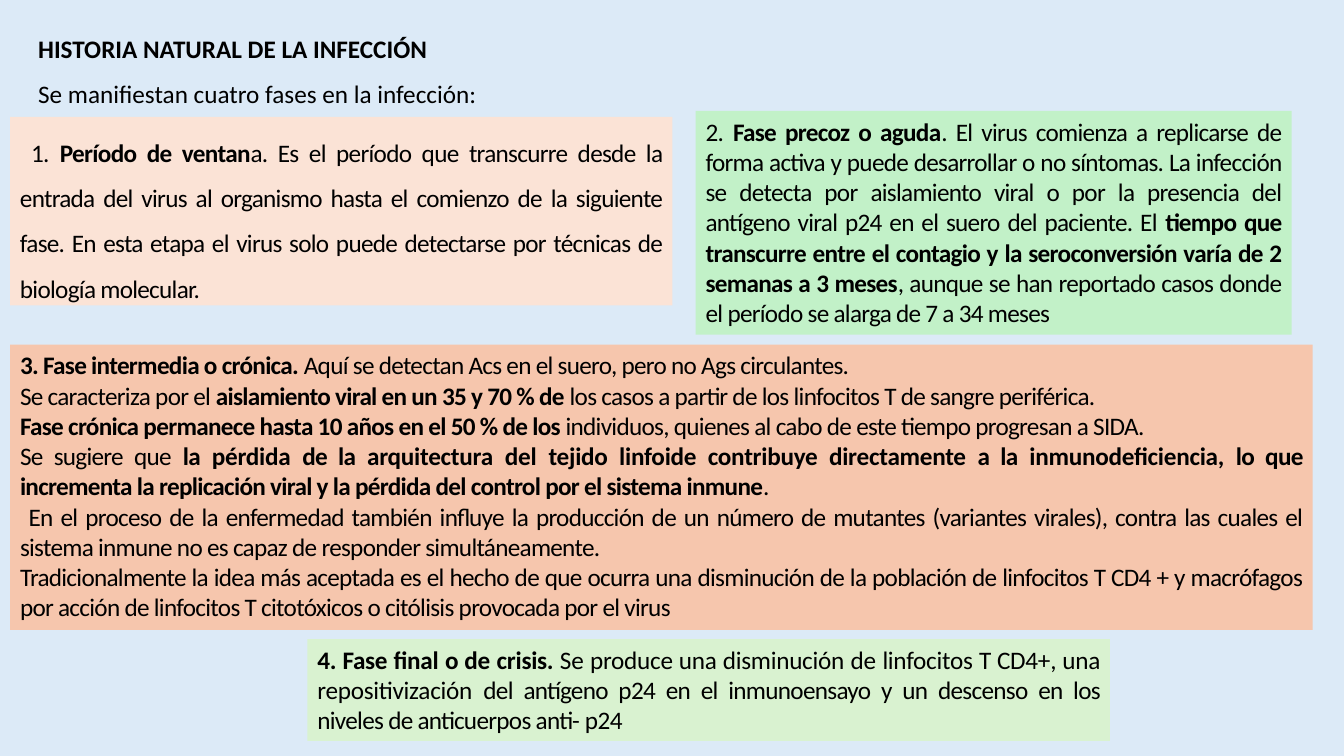
from dataclasses import dataclass

from pptx import Presentation
from pptx.dml.color import RGBColor
from pptx.enum.shapes import MSO_SHAPE
from pptx.enum.text import MSO_ANCHOR, MSO_AUTO_SIZE, PP_ALIGN
from pptx.slide import Slide
from pptx.util import Inches, Pt

RECTANGLE = MSO_SHAPE.RECTANGLE
TOP = MSO_ANCHOR.TOP
GROW = MSO_AUTO_SIZE.SHAPE_TO_FIT_TEXT
JUSTIFY = PP_ALIGN.JUSTIFY

COLOURS = {
    "background": "DCEAF7",
    "window": "FBE3D6",
    "acute": "C2F1C8",
    "chronic": "F6C6AD",
    "final": "D9F2D0",
    "text": "000000",
}
FONT_FORMAT = {"name": "Calibri", "size": Pt(18)}
FRAME_FORMAT = {"word_wrap": True, "auto_size": GROW, "vertical_anchor": TOP}


@dataclass(frozen=True)
class Span:
    text: str
    spacing: float = -0.5
    bold: bool = False


@dataclass(frozen=True)
class Box:
    left: float
    top: float
    width: float
    height: float
    paragraphs: list[list[Span]]
    fill: str = ""
    line_spacing: float = 1.0


def strong(text: str, spacing: float = -0.5) -> Span:
    return Span(text, spacing, True)


BOXES = [
    Box(0.28, 0.13, 11.85, 0.96, [
        [strong("HISTORIA NATURAL DE LA INFECCIÓN", 0)],
        [Span("Se manifiestan cuatro fases en la infección:", 0)],
    ], line_spacing=1.5),
    Box(0.1, 1.16, 6.57, 1.87, [[
        Span(" ", 0),
        Span("1. "),
        strong("Período de ventan"),
        Span("a. Es el período que transcurre desde la entrada del virus al organismo "
             "hasta el comienzo de la siguiente fase. En esta etapa el virus solo puede "
             "detectarse por técnicas de biología molecular."),
    ]], "window", 1.5),
    Box(6.9, 1.1, 5.91, 2.22, [[
        Span("2. "),
        strong("Fase precoz o aguda"),
        Span(". El virus comienza a replicarse de forma activa y puede desarrollar o no "
             "síntomas. La infección se detecta por aislamiento viral o por la presencia "
             "del antígeno viral p24 en el suero del paciente. El "),
        strong("tiempo que transcurre entre el contagio y la seroconversión varía "
               "de 2 semanas a 3 meses"),
        Span(", aunque se han reportado casos donde el período se alarga de 7 a 34 meses"),
    ]], "acute"),
    Box(0.1, 3.42, 12.92, 2.83, [
        [
            strong("3. Fase intermedia o crónica. "),
            Span("Aquí se detectan Acs en el suero, pero no Ags circulantes. "),
        ],
        [
            Span("Se caracteriza por el "),
            strong("aislamiento viral en un 35 y 70 % de "),
            Span("los casos a partir de los linfocitos T de sangre periférica."),
        ],
        [
            strong("Fase crónica permanece hasta 10 años en el 50 % de los "),
            Span("individuos, quienes al cabo de este tiempo progresan a SIDA. "),
        ],
        [
            Span("Se sugiere que "),
            strong("la "),
            strong("pérdida ", -0.2),
            strong("de la "),
            strong("arquitectura ", -0.2),
            strong("del ", -0.1),
            strong("tejido linfoide contribuye directamente ", -0.2),
            strong("a la "),
            strong("inmunodeficiencia, ", -0.2),
            strong("lo que incrementa la replicación viral y la pérdida del control "
                   "por el sistema inmune"),
            Span("."),
        ],
        [
            Span(" ", -0.9),
            Span("En el proceso de la enfermedad también influye la producción de un número "
                 "de mutantes (variantes virales), contra las cuales el sistema inmune no es "
                 "capaz de responder simultáneamente. "),
        ],
        [
            Span("Tradicionalmente la idea más aceptada es el hecho de que ocurra una "
                 "disminución de la población de linfocitos T CD4 + y macrófagos por acción "
                 "de linfocitos T citotóxicos o citólisis provocada por el virus"),
        ],
    ], "chronic"),
    Box(3.05, 6.34, 7.96, 1.01, [[
        strong("4. Fase final ", -0.2),
        strong("o "),
        strong("de ", -0.1),
        strong("crisis. ", -0.2),
        Span("Se ", -0.1),
        Span("produce una disminución ", -0.2),
        Span("de ", -0.1),
        Span("linfocitos ", -0.2),
        Span("T "),
        Span("CD4+, una repositivización ", -0.2),
        Span("del antígeno p24 en el inmunoensayo y un descenso en los niveles "
             "de anticuerpos anti- "),
        Span("p24", -0.3),
    ]], "final"),
]


def apply_format(target: object, values: dict[str, object]) -> None:
    for name, value in values.items():
        setattr(target, name, value)


def draw_box(page: Slide, box: Box) -> None:
    place = [Inches(value) for value in (box.left, box.top, box.width, box.height)]
    if box.fill:
        shape = page.shapes.add_shape(RECTANGLE, *place)
        shape.shadow.inherit = False
        shape.fill.solid()
        shape.fill.fore_color.rgb = RGBColor.from_string(COLOURS[box.fill])
        shape.line.fill.background()
    else:
        shape = page.shapes.add_textbox(*place)
    frame = shape.text_frame
    apply_format(frame, FRAME_FORMAT)
    for index, spans in enumerate(box.paragraphs):
        para = frame.add_paragraph() if index else frame.paragraphs[0]
        apply_format(para, {"alignment": JUSTIFY, "line_spacing": box.line_spacing})
        for span in spans:
            run = para.add_run()
            run.text = span.text
            apply_format(run.font, FONT_FORMAT | {"bold": span.bold})
            run.font.color.rgb = RGBColor.from_string(COLOURS["text"])
            if span.spacing:
                run._r.get_or_add_rPr().set("spc", str(round(span.spacing * 100)))


def main() -> None:
    deck = Presentation()
    deck.slide_width = Inches(13.33)
    deck.slide_height = Inches(7.5)
    page = deck.slides.add_slide(deck.slide_layouts[6])
    page.background.fill.solid()
    page.background.fill.fore_color.rgb = RGBColor.from_string(COLOURS["background"])
    for box in BOXES:
        draw_box(page, box)
    deck.save("out.pptx")


if __name__ == "__main__":
    main()
